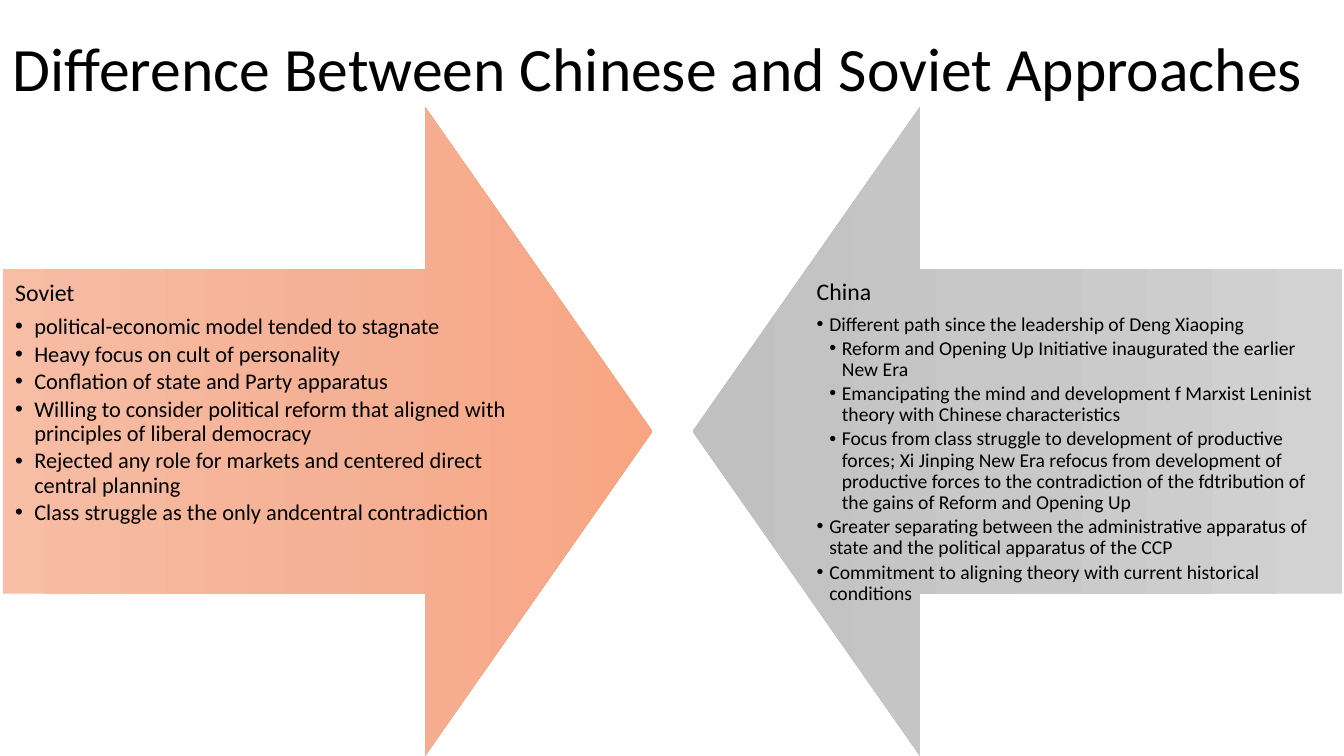
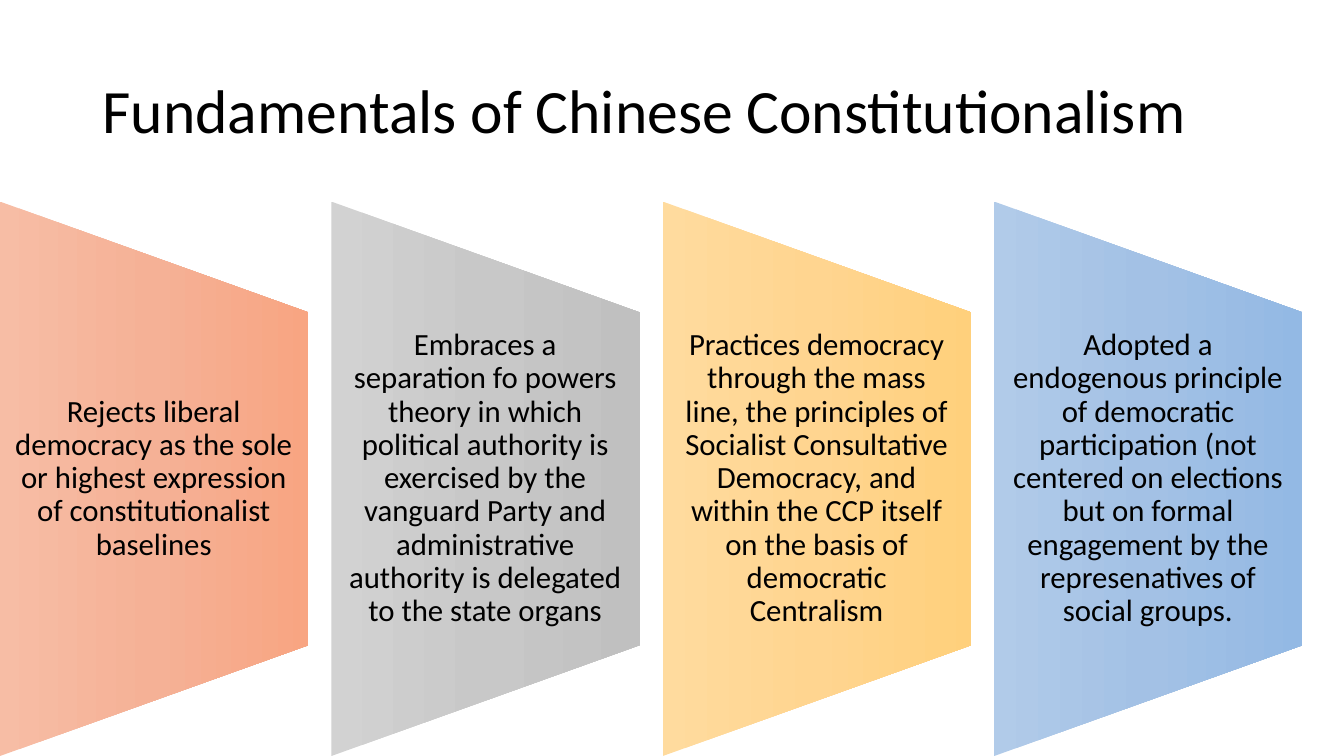
from dataclasses import dataclass

from lxml import etree
from pptx import Presentation
from pptx.dml.color import RGBColor
from pptx.enum.shapes import MSO_SHAPE
from pptx.enum.text import MSO_ANCHOR, PP_ALIGN
from pptx.oxml.ns import qn
from pptx.util import Inches, Pt

DOWN_ARROW = MSO_SHAPE.DOWN_ARROW
TAPERED_PANEL = MSO_SHAPE.FLOWCHART_MANUAL_OPERATION
TOP, MIDDLE = MSO_ANCHOR.TOP, MSO_ANCHOR.MIDDLE
LEFT, CENTER = PP_ALIGN.LEFT, PP_ALIGN.CENTER

SLIDE_W, SLIDE_H = 13.33, 7.5


@dataclass(frozen=True)
class Theme:
    font: str = "Calibri"
    ink: str = "000000"
    title_size: int = 44
    heading_size: int = 17
    panel_size: int = 22
    line_spacing: float = 0.9
    heading_gap: float = 0.35
    bullet_gap: float = 0.15
    # Each gradient runs from the top of the page to the bottom.
    orange: tuple = ("F7BDA5", "F5B196", "F8A582")
    gray: tuple = ("D2D2D2", "C8C8C8", "C0C0C0")
    gold: tuple = ("FFDB9E", "FFD590", "FFD07C")
    blue: tuple = ("B1CBE9", "A3C1E5", "93B9E4")


THEME = Theme()

SOVIET_POINTS = [
    (1, "political-economic model tended to stagnate"),
    (1, "Heavy focus on cult of personality"),
    (1, "Conflation of state and Party apparatus"),
    (1, "Willing to consider political reform that aligned with principles of liberal democracy"),
    (1, "Rejected any role for markets and centered direct central planning"),
    (1, "Class struggle as the only andcentral contradiction"),
]
CHINA_POINTS = [
    (1, "Different path since the leadership of Deng Xiaoping"),
    (2, "Reform and Opening Up Initiative inaugurated the earlier New Era"),
    (2, "Emancipating the mind and development f Marxist Leninist theory "
        "with Chinese characteristics"),
    (2, "Focus from class struggle to development of productive forces; Xi Jinping New Era "
        "refocus from development of productive forces to the contradiction of the "
        "fdtribution of the gains of Reform and Opening Up"),
    (1, "Greater separating between the administrative apparatus of state and the "
        "political apparatus of the CCP"),
    (1, "Commitment to aligning theory with current historical conditions"),
]
FUNDAMENTALS = [
    (THEME.orange, "Rejects liberal democracy as the sole or highest expression of "
                   "constitutionalist baselines"),
    (THEME.gray, "Embraces a separation fo powers theory in which political authority is "
                 "exercised by the vanguard Party and administrative authority is delegated "
                 "to the state organs"),
    (THEME.gold, "Practices democracy through the mass line, the principles of Socialist "
                 "Consultative Democracy, and within the CCP itself on the basis of "
                 "democratic Centralism"),
    (THEME.blue, "Adopted a endogenous principle of democratic participation (not centered "
                 "on elections but on formal engagement by the represenatives of social "
                 "groups."),
]


def add_bullet(paragraph, level, indent):
    properties = paragraph._p.get_or_add_pPr()
    properties.set("marL", str(Inches(indent * level)))
    properties.set("indent", str(-Inches(indent)))
    etree.SubElement(properties, qn("a:buFont")).set("typeface", "Arial")
    etree.SubElement(properties, qn("a:buChar")).set("char", "•")


def add_text(slide, box, text, *, size, points=(), point_size=None, indent=0,
             anchor=TOP, align=LEFT, insets=(0.1, 0.05, 0.1, 0.05)):
    """Write a lead paragraph, then any (level, text) bullet points."""
    frame = slide.shapes.add_textbox(*map(Inches, box)).text_frame
    frame.word_wrap = True
    frame.vertical_anchor = anchor
    (frame.margin_left, frame.margin_top,
     frame.margin_right, frame.margin_bottom) = map(Inches, insets)
    for index, (level, words) in enumerate([(0, text), *points]):
        paragraph = frame.add_paragraph() if index else frame.paragraphs[0]
        paragraph_size = point_size if level else size
        if level:
            add_bullet(paragraph, level, indent)
        if points:
            gap = THEME.bullet_gap if level else THEME.heading_gap
            paragraph.space_after = Pt(paragraph_size * gap)
        paragraph.alignment = align
        paragraph.line_spacing = THEME.line_spacing
        run = paragraph.add_run()
        run.text = words
        run.font.name = THEME.font
        run.font.size = Pt(paragraph_size)
        run.font.color.rgb = RGBColor.from_string(THEME.ink)


def add_title(slide, box, text):
    add_text(slide, box, text, size=THEME.title_size, anchor=MIDDLE)


def fill_gradient(shape, colors):
    shape.fill.gradient()
    gradient = shape._element.spPr.find(qn("a:gradFill"))
    stops = gradient.find(qn("a:gsLst"))
    for stop in list(stops):
        stops.remove(stop)
    for index, color in enumerate(colors):
        stop = etree.SubElement(stops, qn("a:gs"))
        stop.set("pos", str(index * 100000 // (len(colors) - 1)))
        etree.SubElement(stop, qn("a:srgbClr")).set("val", color)
    gradient.find(qn("a:lin")).set("ang", "5400000")


def add_turned_shape(slide, kind, box, rotation, colors):
    """Add a shape turned by a quarter so that it covers box as seen on the page."""
    left, top, width, height = box
    shift = (width - height) / 2
    shape = slide.shapes.add_shape(
        kind, *map(Inches, (left + shift, top - shift, height, width)))
    shape.rotation = rotation
    shape.shadow.inherit = False
    shape.line.fill.background()
    fill_gradient(shape, colors)
    return shape


def add_comparison_arrow(slide, left, rotation, colors, text_left, heading, points, **text_format):
    side = 6.44
    top = SLIDE_H - side
    arrow = add_turned_shape(slide, DOWN_ARROW, (left, top, side, side), rotation, colors)
    arrow.adjustments[0], arrow.adjustments[1] = 0.5, 0.35
    add_text(slide, (text_left, top + side / 4, 5.31, side / 2), heading,
             size=THEME.heading_size, points=points, **text_format)


def build_approaches(slide):
    add_title(slide, (0.03, 0, 13.31, 1.43), "Difference Between Chinese and Soviet Approaches")
    add_comparison_arrow(slide, 0.03, 270, THEME.orange, 0.03, "Soviet", SOVIET_POINTS,
                         point_size=16, indent=0.19, insets=(0.12,) * 4)
    add_comparison_arrow(slide, 6.87, 90, THEME.gray, 7.99, "China", CHINA_POINTS,
                         point_size=14, indent=0.125, insets=(0.11,) * 4)


def build_fundamentals(slide):
    add_title(slide, (0.92, 0.4, 11.5, 1.45), "Fundamentals of Chinese Constitutionalism")
    panel_w, panel_h, pitch = 3.06, 5.5, 3.287
    top = SLIDE_H - panel_h
    for column, (colors, text) in enumerate(FUNDAMENTALS):
        left = column * pitch
        add_turned_shape(slide, TAPERED_PANEL, (left, top, panel_w, panel_h), 270, colors)
        add_text(slide, (left, top + panel_h * 0.2, panel_w, panel_h * 0.6), text,
                 size=THEME.panel_size, anchor=MIDDLE, align=CENTER,
                 insets=(0.15, 0, 0.16, 0))


def main():
    deck = Presentation()
    deck.slide_width, deck.slide_height = Inches(SLIDE_W), Inches(SLIDE_H)
    blank = deck.slide_layouts[6]
    for build in (build_approaches, build_fundamentals):
        build(deck.slides.add_slide(blank))
    deck.save("out.pptx")


if __name__ == "__main__":
    main()
